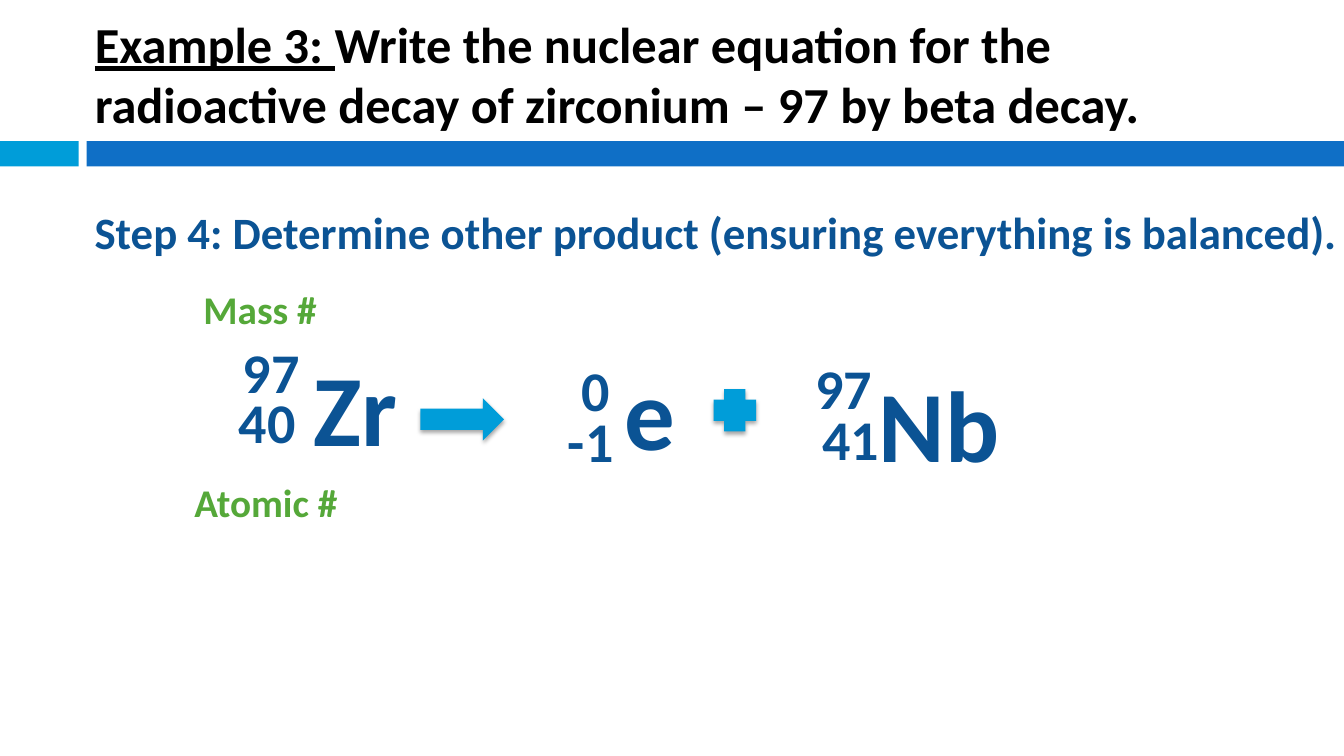
from lxml import etree
from pptx import Presentation
from pptx.dml.color import RGBColor
from pptx.enum.shapes import MSO_SHAPE
from pptx.enum.text import MSO_ANCHOR, MSO_AUTO_SIZE, PP_ALIGN
from pptx.oxml import parse_xml
from pptx.util import Inches, Pt

RECTANGLE = MSO_SHAPE.RECTANGLE
ARROW = MSO_SHAPE.RIGHT_ARROW
PLUS = MSO_SHAPE.CROSS
LEFT, CENTER = PP_ALIGN.LEFT, PP_ALIGN.CENTER
TOP = MSO_ANCHOR.TOP
NO_FIT = MSO_AUTO_SIZE.NONE

BLACK = RGBColor(0x00, 0x00, 0x00)
NAVY = RGBColor(0x0B, 0x53, 0x94)
GREEN = RGBColor(0x55, 0xA8, 0x39)
CYAN = RGBColor(0x00, 0x9D, 0xD9)
BLUE = RGBColor(0x0F, 0x6F, 0xC6)

FONT = "Calibri"
TITLE_ONLY = 5
COLUMNS, ROWS = 133.33, 75
CELL = Inches(0.1)
MARGIN = 8.4
NUMBER_HEIGHT, SYMBOL_HEIGHT, NUMBER_GAP = 7.7, 13.1, 5

SHADOW = (
    '<a:effectLst xmlns:a="http://schemas.openxmlformats.org/drawingml/2006/main">'
    '<a:outerShdw blurRad="38100" dist="25400" dir="5400000" rotWithShape="0">'
    '<a:srgbClr val="000000"><a:alpha val="35000"/></a:srgbClr>'
    "</a:outerShdw></a:effectLst>"
)


def cells(*counts):
    """Turn counts of grid cells into slide lengths."""
    return [round(count * CELL) for count in counts]


def add_run(paragraph, text, size, color, underline=False):
    """Append one bold run to a paragraph."""
    run = paragraph.add_run()
    run.text = text
    font = run.font
    font.name, font.size, font.bold, font.underline = FONT, Pt(size), True, underline
    font.color.rgb = color


def add_label(shapes, box, text, size, color, align=LEFT):
    """Add a single line of bold text."""
    frame = shapes.add_textbox(*cells(*box)).text_frame
    frame.word_wrap = False
    paragraph = frame.paragraphs[0]
    paragraph.alignment = align
    add_run(paragraph, text, size, color)
    return frame


def add_block(shapes, kind, box, color, shadow=False):
    """Add a filled shape without outline, optionally with a soft shadow."""
    block = shapes.add_shape(kind, *cells(*box))
    block.fill.solid()
    block.fill.fore_color.rgb = color
    block.line.fill.background()
    block.shadow.inherit = False
    if shadow:
        properties = block.fill._xPr
        for effects in properties.findall("{*}effectLst"):
            properties.replace(effects, parse_xml(etree.tostring(etree.fromstring(SHADOW))))


def add_nuclide(shapes, mass, atomic, symbol, mass_left, atomic_left, number_width,
                number_top, symbol_left, symbol_top, symbol_width):
    """Add a grouped nuclide: mass number above atomic number, then its symbol."""
    group = shapes.add_group_shape().shapes
    for number, left, top in (
        (mass, mass_left, number_top),
        (atomic, atomic_left, number_top + NUMBER_GAP),
    ):
        add_label(group, (left, top, number_width, NUMBER_HEIGHT), number, 40, NAVY, CENTER)
    add_label(group, (symbol_left, symbol_top, symbol_width, SYMBOL_HEIGHT),
              symbol, 72, NAVY, CENTER)


def fill_title(title):
    """Place the title at the top left and write the question into it."""
    title.left, title.top, title.width, title.height = cells(MARGIN, 0.8, 118.9, 13)
    frame = title.text_frame
    frame.auto_size, frame.word_wrap, frame.vertical_anchor = NO_FIT, True, TOP
    paragraph = frame.paragraphs[0]
    paragraph.alignment, paragraph.space_before = LEFT, Pt(7)
    add_run(paragraph, "Example 3: ", 36, BLACK, underline=True)
    add_run(paragraph, "Write the nuclear equation for the radioactive decay of "
            "zirconium – 97 by beta decay.", 36, BLACK)


def main():
    """Build the beta decay slide."""
    deck = Presentation()
    deck.slide_width, deck.slide_height = cells(COLUMNS, ROWS)
    slide = deck.slides.add_slide(deck.slide_layouts[TITLE_ONLY])
    shapes = slide.shapes
    fill_title(shapes.title)

    add_block(shapes, RECTANGLE, (0, 14, 7.8, 2.5), CYAN)
    add_block(shapes, RECTANGLE, (8.6, 14, COLUMNS - 8.6, 2.5), BLUE)

    step = add_label(shapes, (MARGIN, 19.8, COLUMNS - MARGIN, 6.4),
                     "Step 4: Determine other product (ensuring everything is balanced).",
                     32, NAVY)
    step.margin_right = 0
    add_label(shapes, (19.2, 27.8, 15.8, 5.7), "Mass #", 28, GREEN)
    add_label(shapes, (18.3, 47, 22.5, 5.7), "Atomic #", 28, GREEN)

    add_nuclide(shapes, "97", "40", "Zr", 22.9, 22.5, 8, 33, 29.7, 33.8, 11.1)
    add_block(shapes, ARROW, (41.7, 39.5, 8.3, 4.2), CYAN, shadow=True)
    add_nuclide(shapes, "0", "-1", "e", 55.7, 55.2, 6.8, 34.8, 61, 34.2, 6.9)
    add_block(shapes, PLUS, (70.8, 38.6, 4.2, 4.2), CYAN, shadow=True)
    add_nuclide(shapes, "97", "41", "Nb", 79.7, 80.4, 8, 34.6, 86, 35.4, 14.3)

    deck.save("out.pptx")


if __name__ == "__main__":
    main()
